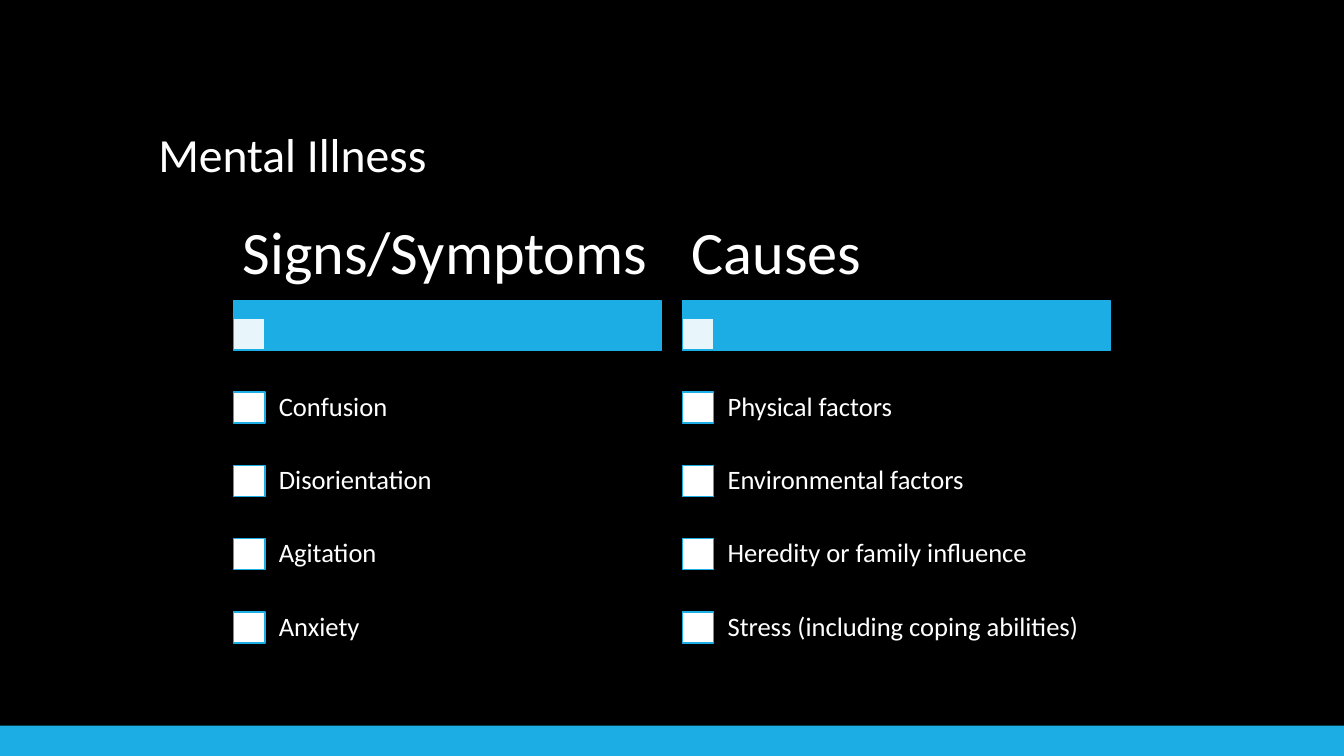
from lxml import etree
from pptx import Presentation
from pptx.dml.color import RGBColor
from pptx.enum import shapes, text
from pptx.oxml.ns import qn
from pptx.util import Pt

BLACK = RGBColor(0x00, 0x00, 0x00)
WHITE = RGBColor(0xFF, 0xFF, 0xFF)
BLUE = RGBColor(0x1C, 0xAD, 0xE4)

COLUMNS = [
    ("Signs/Symptoms", ["Confusion", "Disorientation", "Agitation", "Anxiety"]),
    ("Causes", ["Physical factors", "Environmental factors",
                "Heredity or family influence",
                "Stress (including coping abilities)"]),
]
COLUMN_LEFT, COLUMN_WIDTH, COLUMN_STEP = 167, 305.3, 320.5
HEADING_TOP, HEADING_HEIGHT = 149.8, 64.8
BAR_TOP, BAR_HEIGHT = 214.6, 36
BOX_SIZE, HEADER_BOX_TOP = 22.2, 227.5
ROW_TOP, ROW_STEP = 265, 52.35


def add_rect(s, left, top, width, height, fill, line=None, opacity=100):
    """Add a plain rectangle; opacity is a percentage of the fill."""
    sp = s.shapes.add_shape(shapes.MSO_SHAPE.RECTANGLE,
                            Pt(left), Pt(top), Pt(width), Pt(height))
    sp.shadow.inherit = False
    sp.fill.solid()
    sp.fill.fore_color.rgb = fill
    if opacity < 100:
        color = sp.fill._xPr.find(f".//{qn('a:srgbClr')}")
        etree.SubElement(color, qn("a:alpha"), val=str(opacity * 1000))
    if line is None:
        sp.line.fill.background()
    else:
        sp.line.color.rgb = line
        sp.line.width = Pt(1)


def add_text(s, left, top, width, height, words, size, inset,
             anchor=text.MSO_ANCHOR.MIDDLE):
    """Add one line of white text; inset is (horizontal, vertical)."""
    tf = s.shapes.add_textbox(Pt(left), Pt(top), Pt(width), Pt(height)).text_frame
    across, down = (Pt(v) for v in inset)
    frame_format = {"word_wrap": True, "vertical_anchor": anchor,
                    "margin_left": across, "margin_right": across,
                    "margin_top": down, "margin_bottom": down}
    for name, value in frame_format.items():
        setattr(tf, name, value)
    p = tf.paragraphs[0]
    p.line_spacing = 0.9
    r = p.add_run()
    r.text = words
    for name, value in {"name": "Calibri", "size": Pt(size)}.items():
        setattr(r.font, name, value)
    r.font.color.rgb = WHITE


def add_column(s, left, heading, items):
    add_rect(s, left, BAR_TOP, COLUMN_WIDTH, BAR_HEIGHT, BLUE, BLUE)
    add_rect(s, left, HEADER_BOX_TOP, BOX_SIZE, BOX_SIZE, WHITE, BLUE, opacity=90)
    add_text(s, left, HEADING_TOP, COLUMN_WIDTH, HEADING_HEIGHT, heading, 43, (6.5, 4.3))
    for i, item in enumerate(items):
        top = ROW_TOP + i * ROW_STEP
        add_rect(s, left, top + (ROW_STEP - BOX_SIZE) / 2, BOX_SIZE, BOX_SIZE, WHITE, BLUE)
        add_text(s, left + 21.4, top, COLUMN_WIDTH - 21.4, ROW_STEP, item, 19, (10.8, 10.8))


def main():
    prs = Presentation()
    prs.slide_width, prs.slide_height = Pt(960), Pt(540)
    s = prs.slides.add_slide(prs.slide_layouts[6])
    s.background.fill.solid()
    s.background.fill.fore_color.rgb = BLACK
    add_rect(s, 0, 518.4, 960, 21.6, BLUE)
    add_text(s, 106, 36.7, 748.8, 97.2, "Mental Illness", 34, (7.2, 3.6),
             text.MSO_ANCHOR.BOTTOM)
    for i, (heading, items) in enumerate(COLUMNS):
        add_column(s, COLUMN_LEFT + i * COLUMN_STEP, heading, items)
    prs.save("out.pptx")


if __name__ == "__main__":
    main()
